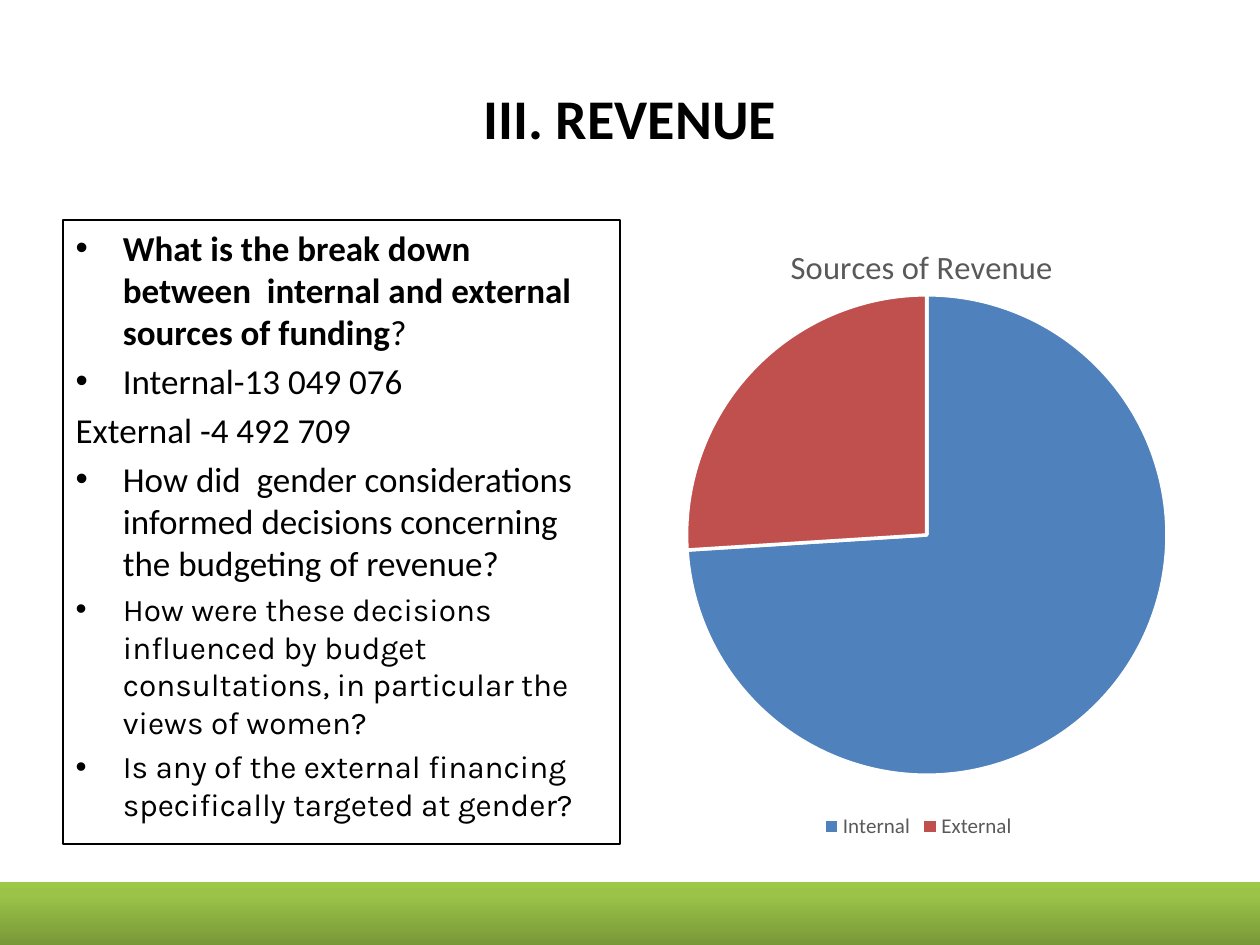
from copy import deepcopy

from lxml.etree import SubElement
from pptx import Presentation
from pptx.chart.data import CategoryChartData
from pptx.dml.color import RGBColor
from pptx.enum.chart import XL_CHART_TYPE, XL_LEGEND_POSITION
from pptx.enum.shapes import MSO_SHAPE
from pptx.enum.text import MSO_AUTO_SIZE
from pptx.oxml import parse_xml
from pptx.oxml.ns import nsdecls, qn
from pptx.util import Emu, Pt

BLACK = RGBColor(0x00, 0x00, 0x00)
WHITE = RGBColor(0xFF, 0xFF, 0xFF)
GREY = RGBColor(0x59, 0x59, 0x59)
BLUE = RGBColor(0x4F, 0x81, 0xBD)
RED = RGBColor(0xC0, 0x50, 0x4D)
STOPS = [
    (0, RGBColor(0x77, 0x97, 0x37)),
    (0.8, RGBColor(0x9B, 0xC3, 0x48)),
    (1, RGBColor(0x9D, 0xC7, 0x46)),
]


def px(n):
    return Emu(round(n * 914400 / 126))


def place(shape, box):
    shape.left, shape.top, shape.width, shape.height = map(px, box)


def style(font, size, color=BLACK, face="Calibri", bold=False):
    font.size, font.name, font.bold = Pt(size), face, bold
    font.color.rgb = color


def write(para, text, **form):
    run = para.add_run()
    run.text = text
    style(run.font, **form)


def add_title(slide, box):
    title = slide.shapes.title
    place(title, box)
    title.text_frame.auto_size = MSO_AUTO_SIZE.NONE
    write(title.text_frame.paragraphs[0], "III. REVENUE", size=32, bold=True)


def add_body(slide, box):
    body = slide.placeholders[1]
    place(body, box)
    body.line.color.rgb = BLACK
    body.line.width = Pt(0.75)
    frame = body.text_frame
    frame.auto_size = MSO_AUTO_SIZE.NONE
    frame.margin_right = px(24)
    large = {"size": 20}
    small = {"size": 18, "face": "Karla"}
    para = frame.paragraphs[0]
    write(para, "What is the break down between  internal and external sources of funding",
          size=20, bold=True)
    write(para, "?", **large)
    items = [
        ("Internal-13 049 076", large, True),
        ("External -4 492 709", large, False),
        ("How did  gender considerations informed decisions concerning the budgeting of revenue?",
         large, True),
        ("How were these decisions influenced by budget consultations, "
         "in particular the views of women?", small, True),
        ("Is any of the external financing specifically targeted at gender?", small, True),
    ]
    for text, form, mark in items:
        para = frame.add_paragraph()
        write(para, text, **form)
        if not mark:
            props = para._p.get_or_add_pPr()
            props.set("marL", "0")
            props.set("indent", "0")
            SubElement(props, qn("a:buNone"))


def add_band(slide, box):
    band = slide.shapes.add_shape(MSO_SHAPE.RECTANGLE, *map(px, box))
    band.shadow.inherit = False
    band.line.fill.background()
    fill = band.fill
    fill.gradient()
    fill.gradient_angle = 90
    nodes = band._element.spPr.find(qn("a:gradFill")).find(qn("a:gsLst"))
    nodes.append(deepcopy(nodes[-1]))
    for stop, (pos, color) in zip(fill.gradient_stops, STOPS):
        stop.position = pos
        stop.color.rgb = color


def new_layout(node, target="", **vals):
    for old in node.findall(qn("c:layout")):
        node.remove(old)
    inner = f'<c:layoutTarget val="{target}"/>' if target else ""
    inner += "".join(f'<c:{key}Mode val="edge"/>' for key in "xy")
    inner += "".join(f'<c:{key} val="{val}"/>' for key, val in vals.items())
    return parse_xml(f'<c:layout {nsdecls("c")}><c:manualLayout>{inner}'
                     '</c:manualLayout></c:layout>')


def add_pie(slide, box):
    data = CategoryChartData()
    data.categories = ["Internal", "External"]
    data.add_series("Sources of Revenue", (74, 26))
    chart = slide.shapes.add_chart(XL_CHART_TYPE.PIE, *map(px, box), data).chart
    style(chart.font, 10)
    chart.has_title = True
    title = chart.chart_title
    write(title.text_frame.paragraphs[0], "Sources of Revenue", size=18.6, color=GREY)
    head = title._element
    head.find(qn("c:tx")).addnext(new_layout(head, x=0.26, y=0.03))
    chart.has_legend = True
    chart.legend.position = XL_LEGEND_POSITION.BOTTOM
    chart.legend.include_in_layout = False
    style(chart.legend.font, 12, GREY)
    plot = chart.plots[0]
    plot.vary_by_categories = True
    area = chart._chartSpace.chart.plotArea
    area.insert(0, new_layout(area, "inner", x=0.08, y=0.12, w=0.87, h=0.77))
    for idx, color in enumerate((BLUE, RED)):
        part = plot.series[0].points[idx].format
        part.fill.solid()
        part.fill.fore_color.rgb = color
        part.line.color.rgb = WHITE
        part.line.width = Pt(2)


def main():
    deck = Presentation()
    deck.slide_width, deck.slide_height = px(1260), px(945)
    slide = deck.slides.add_slide(deck.slide_layouts[1])
    add_title(slide, (63, 38, 1134, 158))
    add_body(slide, (63, 220, 557, 624))
    add_band(slide, (0, 882, 1286, 64))
    add_pie(slide, (640, 220, 557, 624))
    deck.save("out.pptx")


if __name__ == "__main__":
    main()
